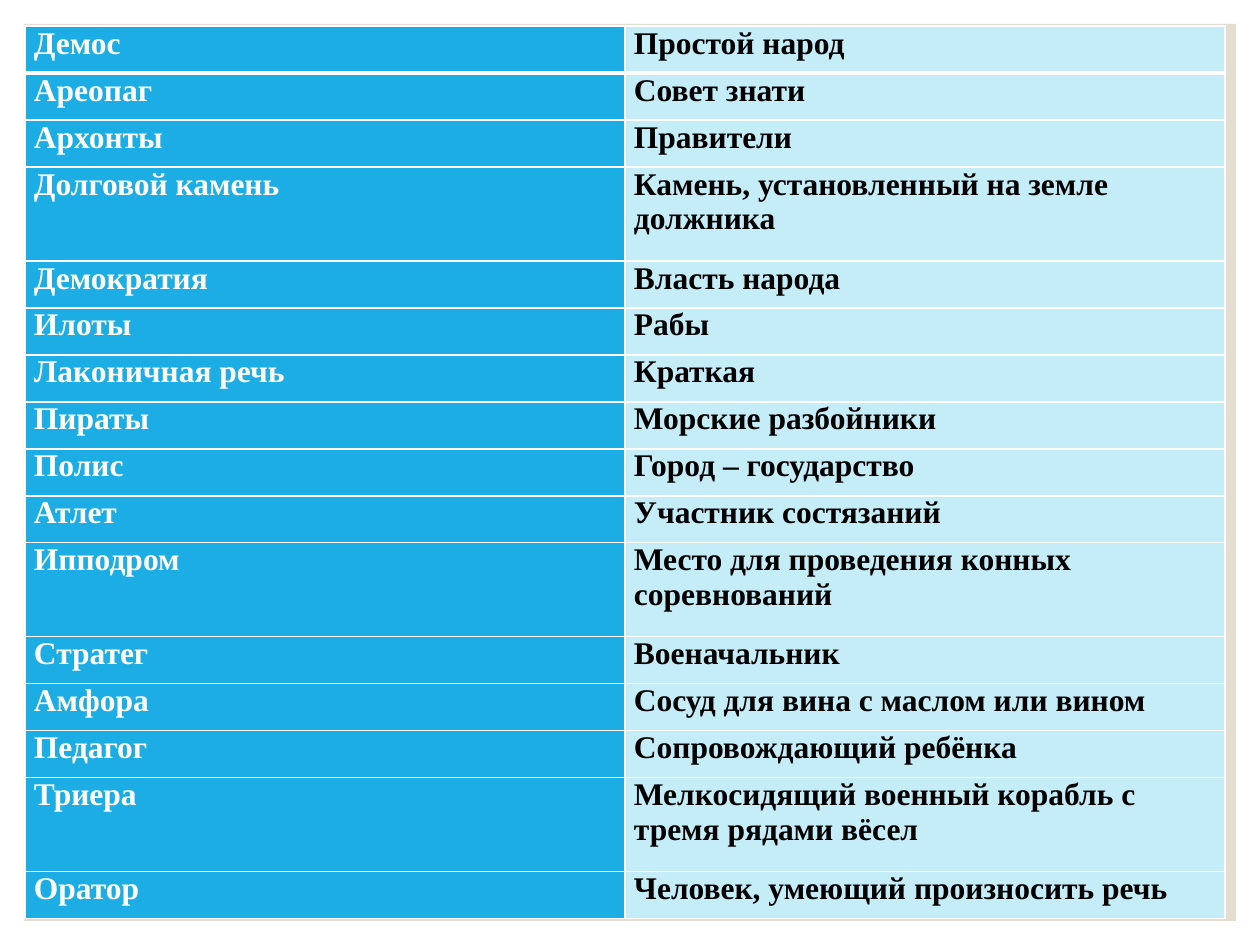
from lxml import etree
from pptx import Presentation
from pptx import util as u
from pptx.dml import color
from pptx.enum import shapes
from pptx.oxml import ns

PX = 914400 // 126
ROW_HEIGHT = 47
COLUMN_WIDTH = 600
TERM_STYLE = ("1CADE4", "FFFFFF")
MEANING_STYLE = ("C5EDF8", "000000")
GLOSSARY = [
    ("Демос", "Простой народ", 1),
    ("Ареопаг", "Совет знати", 1),
    ("Архонты", "Правители", 1),
    ("Долговой камень", "Камень, установленный на земле должника", 2),
    ("Демократия", "Власть народа", 1),
    ("Илоты", "Рабы", 1),
    ("Лаконичная речь", "Краткая", 1),
    ("Пираты", "Морские разбойники", 1),
    ("Полис", "Город – государство", 1),
    ("Атлет", "Участник состязаний", 1),
    ("Ипподром", "Место для проведения конных соревнований", 2),
    ("Стратег", "Военачальник", 1),
    ("Амфора", "Сосуд для вина с маслом или вином", 1),
    ("Педагог", "Сопровождающий ребёнка", 1),
    ("Триера", "Мелкосидящий военный корабль с тремя рядами вёсел", 2),
    ("Оратор", "Человек, умеющий произносить речь", 1),
]


def px(length):
    return u.Emu(length * PX)


def rgb(value):
    return color.RGBColor.from_string(value)


def add_backdrop(slide, left, top, width, height, fill):
    backdrop = slide.shapes.add_shape(
        shapes.MSO_SHAPE.RECTANGLE, px(left), px(top), px(width), px(height))
    backdrop.shadow.inherit = False
    backdrop.fill.solid()
    backdrop.fill.fore_color.rgb = rgb(fill)
    backdrop.line.fill.background()


def set_borders(cell, top, bottom):
    properties = cell._tc.get_or_add_tcPr()
    edges = [("lnL", 1), ("lnR", 1), ("lnT", top), ("lnB", bottom)]
    for position, (edge, points) in enumerate(edges):
        border = etree.Element(ns.qn(f"a:{edge}"), w=str(u.Pt(points)))
        fill = etree.SubElement(border, ns.qn("a:solidFill"))
        etree.SubElement(fill, ns.qn("a:srgbClr"), val="FFFFFF")
        properties.insert(position, border)


def fill_cell(cell, wording, style):
    background, ink = style
    cell.fill.solid()
    cell.fill.fore_color.rgb = rgb(background)
    cell.margin_left = cell.margin_right = px(9)
    cell.margin_top = cell.margin_bottom = 0
    run = cell.text_frame.paragraphs[0].add_run()
    run.text = wording
    run.font.name = "Times New Roman"
    run.font.size = u.Pt(18)
    run.font.bold = True
    run.font.color.rgb = rgb(ink)


def add_glossary(slide, left, top):
    height = ROW_HEIGHT * sum(lines for _, _, lines in GLOSSARY)
    glossary = slide.shapes.add_table(
        len(GLOSSARY), 2, px(left), px(top), px(2 * COLUMN_WIDTH), px(height)).table
    for column in glossary.columns:
        column.width = px(COLUMN_WIDTH)
    for index, (term, meaning, lines) in enumerate(GLOSSARY):
        glossary.rows[index].height = px(ROW_HEIGHT * lines)
        entries = [(term, TERM_STYLE), (meaning, MEANING_STYLE)]
        for column, (wording, style) in enumerate(entries):
            cell = glossary.cell(index, column)
            fill_cell(cell, wording, style)
            set_borders(cell, 3 if index == 1 else 1, 3 if index == 0 else 1)


def main():
    presentation = Presentation()
    presentation.slide_width = px(1260)
    presentation.slide_height = px(945)
    slide = presentation.slides.add_slide(presentation.slide_layouts[6])
    add_backdrop(slide, 24, 24, 1212, 897, "E3DED1")
    add_glossary(slide, 25, 26)
    presentation.save("out.pptx")


if __name__ == "__main__":
    main()
